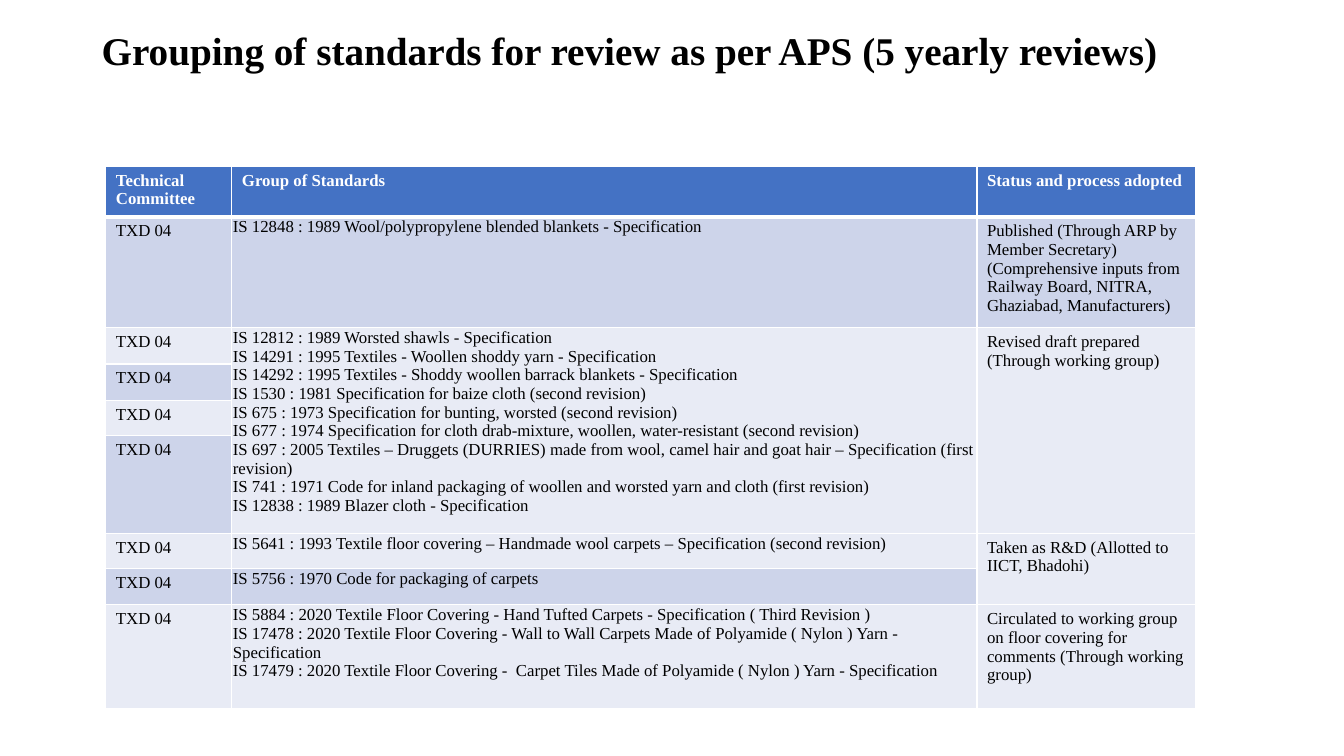
from pptx import Presentation
from pptx.dml.color import RGBColor
from pptx.enum.text import MSO_ANCHOR
from pptx.oxml import parse_xml
from pptx.oxml.ns import nsdecls
from pptx.util import Inches, Pt

FONT = "Times New Roman"
COLORS = {"header": "4472C4", "odd": "CDD4EA", "even": "E8EBF5",
          "white": "FFFFFF", "black": "000000"}

COLUMN_WIDTHS = [1.25, 7.39, 2.17]
ROW_HEIGHTS = [0.47, 1.03, 0.36, 0.36, 0.35, 0.97, 0.35, 0.36, 1.03]
HEADINGS = ["Technical Committee", "Group of Standards", "Status and process adopted"]
COMMITTEE = "TXD 04"

# First table row -> standards listed there, one paragraph each
STANDARDS = {
    1: ["IS 12848 : 1989 Wool/polypropylene blended blankets - Specification"],
    2: ["IS 12812 : 1989 Worsted shawls - Specification",
        "IS 14291 : 1995 Textiles - Woollen shoddy yarn - Specification",
        "IS 14292 : 1995 Textiles - Shoddy woollen barrack blankets - Specification",
        "IS 1530 : 1981 Specification for baize cloth (second revision)",
        "IS 675 : 1973 Specification for bunting, worsted (second revision)",
        "IS 677 : 1974 Specification for cloth drab-mixture, woollen, "
        "water-resistant (second revision)",
        "IS 697 : 2005 Textiles – Druggets (DURRIES) made from wool, camel hair "
        "and goat hair – Specification (first revision)",
        "IS 741 : 1971 Code for inland packaging of woollen and worsted yarn "
        "and cloth (first revision)",
        "IS 12838 : 1989 Blazer cloth - Specification"],
    6: ["IS 5641 : 1993 Textile floor covering – Handmade wool carpets – "
        "Specification (second revision)"],
    7: ["IS 5756 : 1970 Code for packaging of carpets"],
    8: ["IS 5884 : 2020 Textile Floor Covering - Hand Tufted Carpets - "
        "Specification ( Third Revision )",
        "IS 17478 : 2020 Textile Floor Covering - Wall to Wall Carpets Made of "
        "Polyamide ( Nylon ) Yarn - Specification",
        "IS 17479 : 2020 Textile Floor Covering -  Carpet Tiles Made of "
        "Polyamide ( Nylon ) Yarn - Specification"],
}
STATUSES = {
    1: "Published (Through ARP by Member Secretary) (Comprehensive inputs from "
       "Railway Board, NITRA, Ghaziabad, Manufacturers)",
    2: "Revised draft prepared (Through working group)",
    6: "Taken as R&D (Allotted to IICT, Bhadohi)",
    8: "Circulated to working group on floor covering for comments "
       "(Through working group)",
}
# Merged cells: column, first row, last row
MERGES = [(1, 2, 5), (2, 2, 5), (2, 6, 7)]


def write_text(frame, lines, *, size=12, color="black", bold=False, spacing=None):
    """Fill a text frame with one paragraph per line."""
    for index, line in enumerate(lines):
        para = frame.paragraphs[0] if index == 0 else frame.add_paragraph()
        if spacing:
            para.line_spacing = spacing
        span = para.add_run()
        span.text = line
        span.font.name = FONT
        span.font.size = Pt(size)
        span.font.bold = bold
        span.font.color.rgb = RGBColor.from_string(COLORS[color])


class SlideBuilder:
    def __init__(self, page):
        self.page = page

    def title(self, text, left, top, width, height):
        box = self.page.shapes.add_textbox(
            Inches(left), Inches(top), Inches(width), Inches(height))
        frame = box.text_frame
        frame.word_wrap = True
        frame.vertical_anchor = MSO_ANCHOR.BOTTOM
        write_text(frame, [text], size=28, bold=True, spacing=0.9)

    def table(self, left, top, widths, heights):
        shape = self.page.shapes.add_table(
            len(heights), len(widths), Inches(left), Inches(top),
            Inches(sum(widths)), Inches(sum(heights)))
        table = shape.table
        for column, width in zip(table.columns, widths):
            column.width = Inches(width)
        for row, height in zip(table.rows, heights):
            row.height = Inches(height)
        return table

    def borders(self, cell, **widths):
        properties = cell._tc.get_or_add_tcPr()
        for side in "LRTB":
            properties.append(parse_xml(
                f'<a:ln{side} {nsdecls("a")} w="{Pt(widths.get(side, 1))}">'
                f'<a:solidFill><a:srgbClr val="{COLORS["white"]}"/></a:solidFill>'
                f'</a:ln{side}>'))

    def cell(self, cell, lines, fill, tight=False, **text_format):
        cell.fill.solid()
        cell.fill.fore_color.rgb = RGBColor.from_string(COLORS[fill])
        side, top, bottom = (0.01, 0.01, 0) if tight else (0.1, 0.05, 0.05)
        cell.margin_left = cell.margin_right = Inches(side)
        cell.margin_top, cell.margin_bottom = Inches(top), Inches(bottom)
        write_text(cell.text_frame, lines, **text_format)


def main():
    deck = Presentation()
    deck.slide_width, deck.slide_height = Inches(13.33), Inches(7.5)
    builder = SlideBuilder(deck.slides.add_slide(deck.slide_layouts[6]))

    # Title
    builder.title("Grouping of standards for review as per APS (5 yearly reviews)",
                  0.91, 0.2, 11.5, 0.58)

    # Table grid
    table = builder.table(1.05, 1.65, COLUMN_WIDTHS, ROW_HEIGHTS)
    for column, first, last in MERGES:
        table.cell(first, column).merge(table.cell(last, column))

    # Header row
    for column, heading in enumerate(HEADINGS):
        cell = table.cell(0, column)
        builder.borders(cell, B=3)
        builder.cell(cell, [heading], "header", color="white", bold=True)

    # Banded body rows
    for row in range(1, len(ROW_HEIGHTS)):
        status = [STATUSES[row]] if row in STATUSES else []
        contents = [[COMMITTEE], STANDARDS.get(row, []), status]
        for column, lines in enumerate(contents):
            cell = table.cell(row, column)
            builder.borders(cell, T=3 if row == 1 else 1)
            builder.cell(cell, lines, "odd" if row % 2 else "even", tight=column == 1)

    deck.save("out.pptx")


if __name__ == "__main__":
    main()
